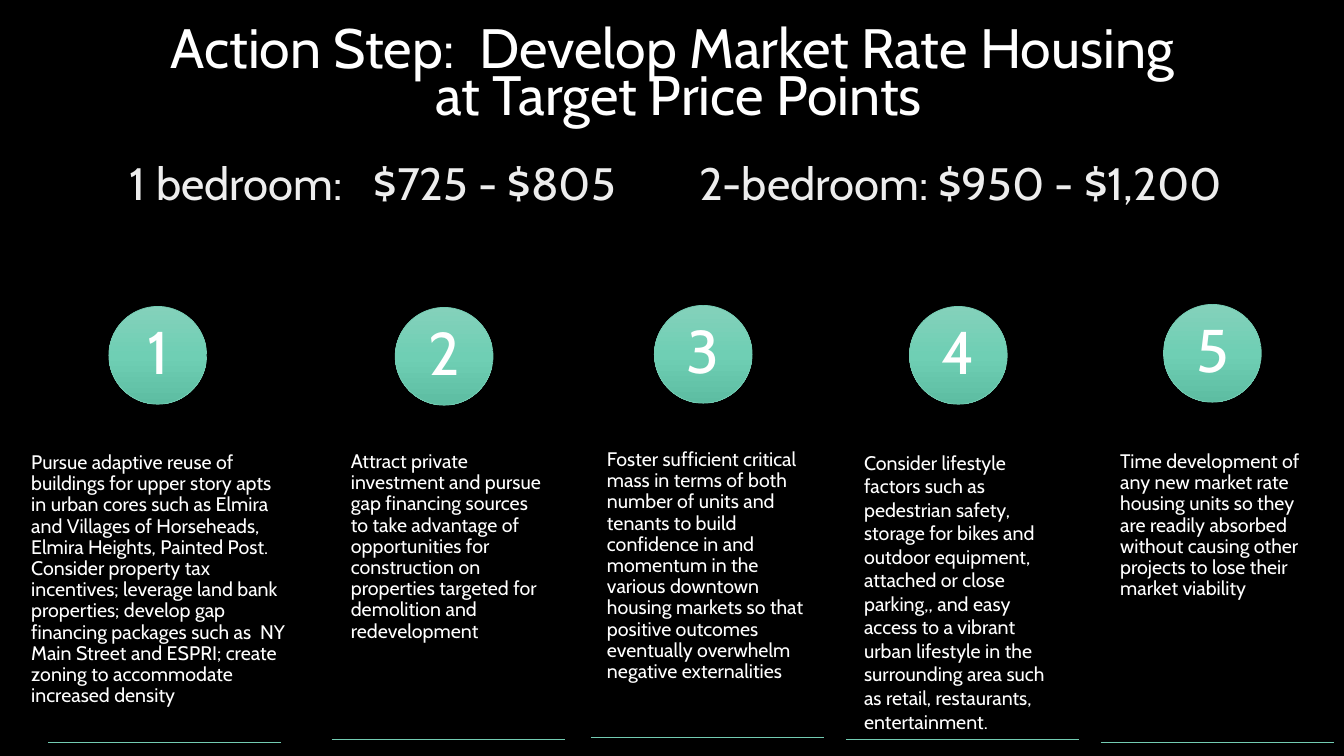
from lxml import etree
from pptx import Presentation
from pptx.dml.color import RGBColor
from pptx.enum.shapes import MSO_CONNECTOR, MSO_SHAPE
from pptx.enum.text import MSO_ANCHOR, PP_ALIGN
from pptx.oxml.ns import qn
from pptx.util import Inches, Pt

CENTER = PP_ALIGN.CENTER
MIDDLE = MSO_ANCHOR.MIDDLE
OVAL, RECTANGLE = MSO_SHAPE.OVAL, MSO_SHAPE.RECTANGLE
STRAIGHT = MSO_CONNECTOR.STRAIGHT

BLACK, WHITE, PRICE_GRAY, MINT = "000000", "FFFFFF", "EDEDED", "73CBB2"
MINT_STOPS = ((0, "84D1BB"), (50, "6FCFB4"), (100, "5DBDA2"))

MARGIN = 0.13
CARD_TOP = 2.14
COLUMN_WIDTH = 2.31
CIRCLE = 0.97
PRICE_TABS = (1.06, 3.48, 6.71)

# card left, card width, circle left, circle top, text top,
# rule left, rule height on the slide, line spacing, text
STEPS = (
    (MARGIN, 2.93, 1.08, 3.04, 4.13, 0.48, 7.36, 0.9,
     "Pursue adaptive reuse of buildings for upper story apts in urban cores "
     "such as Elmira and Villages of Horseheads, Elmira Heights, Painted Post. "
     "Consider property tax incentives; leverage land bank properties; develop "
     "gap financing packages such as  NY Main Street and ESPRI; create zoning "
     "to accommodate increased density"),
    (3.3, COLUMN_WIDTH, 3.92, 3.05, 4.12, 3.29, 7.34, 0.9,
     "Attract private investment and pursue gap financing sources to take "
     "advantage of opportunities for construction on properties targeted for "
     "demolition and redevelopment"),
    (5.84, COLUMN_WIDTH, 6.49, 3.03, 4.1, 5.86, 7.32, 0.9,
     "Foster sufficient critical mass in terms of both number of units and "
     "tenants to build confidence in and momentum in the various downtown "
     "housing markets so that positive outcomes eventually overwhelm negative "
     "externalities"),
    (8.39, COLUMN_WIDTH, 9.02, 3.04, 4.11, 8.39, 7.34, 1.0,
     "Consider lifestyle factors such as pedestrian safety, storage for bikes "
     "and outdoor equipment, attached or close parking,, and easy access to a "
     "vibrant urban lifestyle in the surrounding area such as retail, "
     "restaurants, entertainment."),
    (10.93, COLUMN_WIDTH, 11.54, 3.02, 4.12, 10.92, 7.36, 0.9,
     "Time development of any new market rate housing units so they are readily "
     "absorbed without causing other projects to lose their market viability"),
)


def rgb(value):
    return RGBColor.from_string(value)


def write(paragraph, text, size, color, spacing):
    paragraph.text = text
    paragraph.line_spacing = spacing
    paragraph.font.size = Pt(size)
    paragraph.font.name = "Cabin"
    paragraph.font.color.rgb = rgb(color)


prs = Presentation()
prs.slide_width, prs.slide_height = Inches(13.33), Inches(7.5)
slide = prs.slides.add_slide(prs.slide_layouts[6])
slide.background.fill.solid()
slide.background.fill.fore_color.rgb = rgb(BLACK)
shapes = slide.shapes

# Heading and target prices
heading = shapes.add_textbox(Inches(MARGIN), Inches(0.31), Inches(13.2), Inches(1.83)).text_frame
heading.word_wrap = True
heading.margin_top = 0
title = heading.paragraphs[0]
title.alignment = CENTER
write(title, "Action Step:  Develop Market Rate Housing \vat Target Price Points", 39.6, WHITE, 0.7)

prices = heading.add_paragraph()
prices.space_before = Pt(33)
tab_list = etree.SubElement(prices._p.get_or_add_pPr(), qn("a:tabLst"))
for position in PRICE_TABS:
    etree.SubElement(tab_list, qn("a:tab"), pos=str(Inches(position)), algn="l")
write(prices, "\t1 bedroom:\t$725 - $805\t2-bedroom: $950 - $1,200", 32.4, PRICE_GRAY, 0.7)

# Five numbered steps
for number, (left, width, circle_left, circle_top, text_top,
             rule_left, rule_y, spacing, text) in enumerate(STEPS, 1):
    card = shapes.add_shape(RECTANGLE, Inches(left), Inches(CARD_TOP),
                            Inches(width), Inches(rule_y - CARD_TOP))
    card.shadow.inherit = False
    card.fill.solid()
    card.fill.fore_color.rgb = rgb(BLACK)
    card.line.color.rgb = rgb(BLACK)
    card.line.width = Pt(0.5)

    body = shapes.add_textbox(Inches(left), Inches(text_top), Inches(width), Inches(3.12)).text_frame
    body.word_wrap = True
    body.margin_left = body.margin_right = Inches(0.18)
    body.margin_top = body.margin_bottom = Inches(0.36)
    write(body.paragraphs[0], text, 14, WHITE, spacing)

    circle = shapes.add_shape(OVAL, Inches(circle_left), Inches(circle_top),
                              Inches(CIRCLE), Inches(CIRCLE))
    circle.shadow.inherit = False
    circle.line.color.rgb = rgb(MINT)
    circle.line.width = Pt(0.5)
    circle.fill.gradient()
    circle.fill.gradient_angle = 270  # counter-clockwise: top to bottom
    stop_list = circle._element.spPr.find(qn("a:gradFill")).find(qn("a:gsLst"))
    stop_list.clear()
    for share, color in MINT_STOPS:
        stop = etree.SubElement(stop_list, qn("a:gs"), pos=str(share * 1000))
        etree.SubElement(stop, qn("a:srgbClr"), val=color)

    label = circle.text_frame
    label.vertical_anchor = MIDDLE
    label.margin_left = label.margin_right = Inches(0.08)
    label.margin_top = label.margin_bottom = Inches(0.01)
    label.paragraphs[0].alignment = CENTER
    write(label.paragraphs[0], str(number), 43, WHITE, 0.9)

    rule = shapes.add_connector(STRAIGHT, Inches(rule_left), Inches(rule_y),
                                Inches(rule_left + COLUMN_WIDTH), Inches(rule_y))
    rule.line.color.rgb = rgb(MINT)
    rule.line.width = Pt(0.5)
    etree.SubElement(rule._element.spPr, qn("a:effectLst"))

prs.save("out.pptx")
